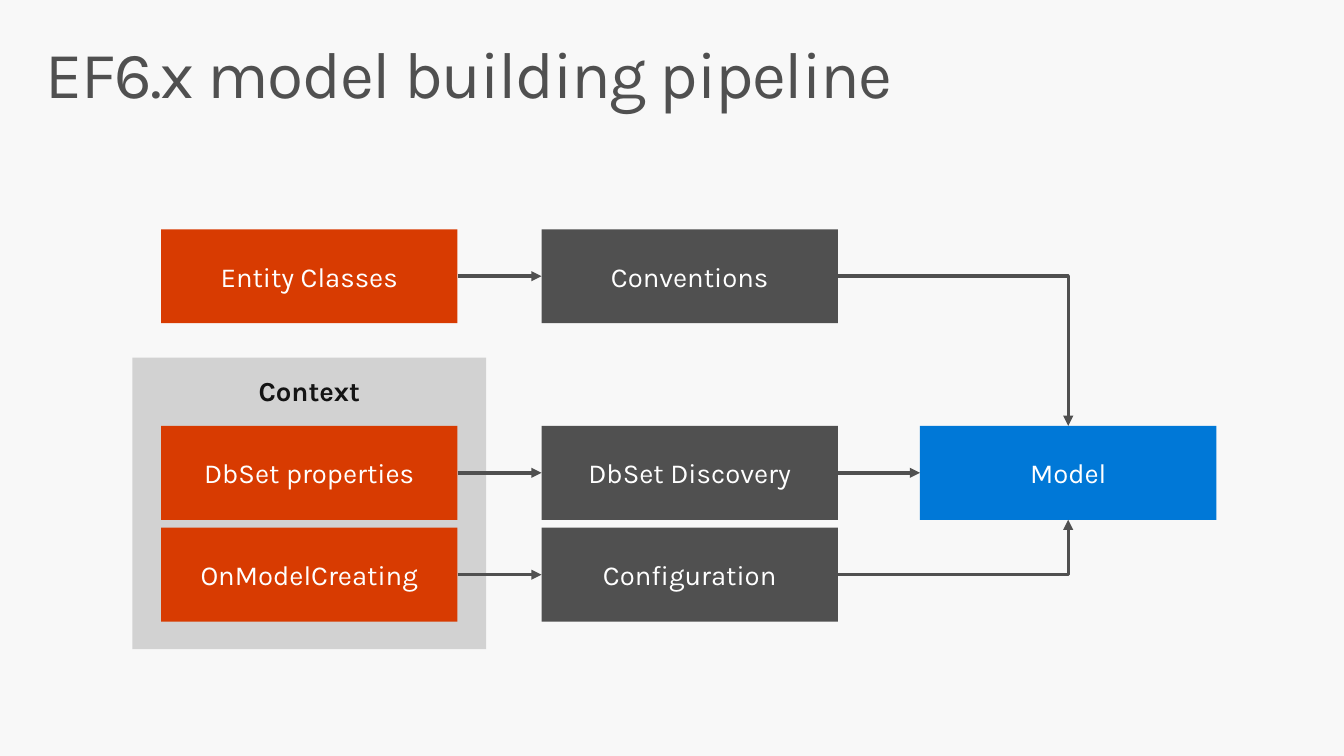
from pptx import Presentation
from pptx import util as u
from pptx.dml import color
from pptx.enum import shapes, text
from pptx.oxml import ns
from lxml import etree

FONT = "Karla"
ORANGE, GRAY, BLUE = "D83B01", "505050", "0078D7"
LIGHT_GRAY, BLACK, WHITE = "D2D2D2", "141414", "FFFFFF"
BOX_WIDTH, BOX_HEIGHT = 3, 0.95
SOURCE_LEFT, STEP_LEFT, MODEL_LEFT = 1.63, 5.48, 9.31
ROW_TOPS = (2.32, 4.31, 5.34)
TOP, BOTTOM, LEFT, RIGHT = 0, 2, 1, 3


def rgb(value):
    return color.RGBColor.from_string(value)


def set_text(shape, content, size=20, ink=WHITE, bold=False, spacing=None,
             line_spacing=None, align=text.PP_ALIGN.CENTER,
             anchor=text.MSO_ANCHOR.MIDDLE, insets=(0.2, 0.16)):
    frame = shape.text_frame
    frame.word_wrap = True
    frame.vertical_anchor = anchor
    frame.margin_left = frame.margin_right = u.Inches(insets[0])
    frame.margin_top = frame.margin_bottom = u.Inches(insets[1])
    paragraph = frame.paragraphs[0]
    paragraph.alignment = align
    paragraph.line_spacing = line_spacing
    run = paragraph.add_run()
    run.text = content
    run.font.name = FONT
    run.font.size = u.Pt(size)
    run.font.bold = bold
    run.font.color.rgb = rgb(ink)
    if spacing is not None:
        run.font._element.set("spc", str(spacing * 100))


def add_title(slide, content):
    title = slide.shapes.add_textbox(
        u.Inches(0.3), u.Inches(0.32), u.Inches(13), u.Inches(1))
    set_text(title, content, size=48, ink=GRAY, spacing=-1, line_spacing=0.9,
             align=text.PP_ALIGN.LEFT, anchor=text.MSO_ANCHOR.TOP,
             insets=(0.16, 0.1))


def add_box(parent, content, left, top, fill, width=BOX_WIDTH,
            height=BOX_HEIGHT, **text_format):
    box = parent.shapes.add_shape(
        shapes.MSO_SHAPE.RECTANGLE, u.Inches(left), u.Inches(top),
        u.Inches(width), u.Inches(height))
    box.shadow.inherit = False
    box.fill.solid()
    box.fill.fore_color.rgb = rgb(fill)
    box.line.fill.background()
    set_text(box, content, **text_format)
    return box


def add_arrow(slide, start, end, end_side=LEFT):
    straight = end_side == LEFT
    kind = shapes.MSO_CONNECTOR.STRAIGHT if straight else shapes.MSO_CONNECTOR.ELBOW
    arrow = slide.shapes.add_connector(kind, 0, 0, 0, 0)
    arrow.begin_connect(start, RIGHT)
    arrow.end_connect(end, end_side)
    arrow.line.color.rgb = rgb(GRAY)
    arrow.line.width = u.Pt(2.5)
    properties = arrow._element.spPr
    if not straight:
        properties.find(ns.qn("a:prstGeom")).set("prst", "bentConnector2")
    head = etree.SubElement(arrow.line._get_or_add_ln(), ns.qn("a:tailEnd"))
    head.set("type", "triangle")
    etree.SubElement(properties, ns.qn("a:effectLst"))


def main():
    presentation = Presentation()
    presentation.slide_width = u.Inches(13.6)
    presentation.slide_height = u.Inches(7.65)
    slide = presentation.slides.add_slide(presentation.slide_layouts[6])
    slide.background.fill.solid()
    slide.background.fill.fore_color.rgb = rgb("F8F8F8")

    add_title(slide, "EF6.x model building pipeline")
    entities = add_box(slide, "Entity Classes", SOURCE_LEFT, ROW_TOPS[0], ORANGE)
    context = slide.shapes.add_group_shape()
    add_box(context, "Context", 1.34, 3.62, LIGHT_GRAY, width=3.58, height=2.95,
            ink=BLACK, bold=True, anchor=text.MSO_ANCHOR.TOP)
    members = [add_box(context, name, SOURCE_LEFT, top, ORANGE)
               for name, top in zip(("DbSet properties", "OnModelCreating"),
                                    ROW_TOPS[1:])]
    step_names = ("Conventions", "DbSet Discovery", "Configuration")
    steps = [add_box(slide, name, STEP_LEFT, top, GRAY)
             for name, top in zip(step_names, ROW_TOPS)]
    model = add_box(slide, "Model", MODEL_LEFT, ROW_TOPS[1], BLUE)

    for source, step in zip([entities, *members], steps):
        add_arrow(slide, source, step)
    for step, side in zip(steps, (TOP, LEFT, BOTTOM)):
        add_arrow(slide, step, model, end_side=side)

    presentation.save("out.pptx")


if __name__ == "__main__":
    main()
